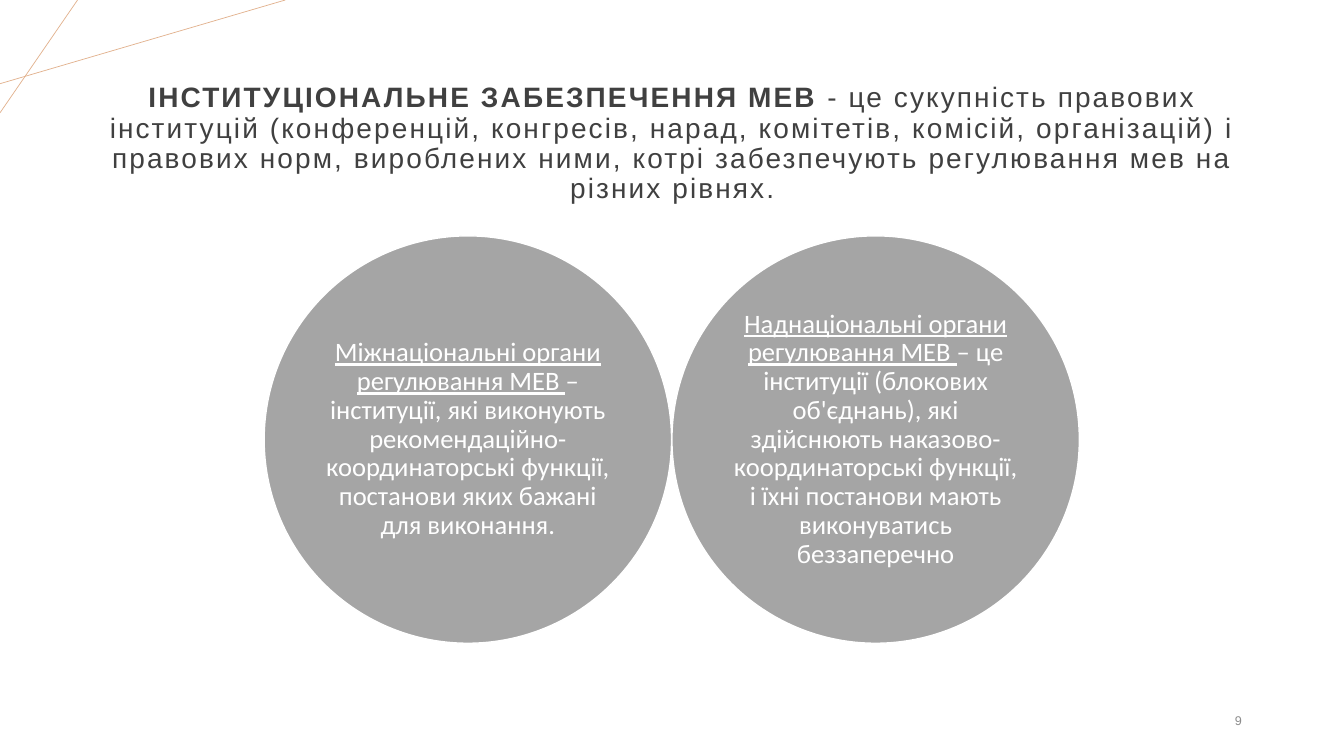
from lxml import etree
from pptx import Presentation
from pptx.dml.color import RGBColor
from pptx.enum import shapes, text
from pptx.oxml import ns
from pptx.util import Pt


def paint(color, tint):
    color.rgb = RGBColor.from_string(tint)


def write(shape, parts, size, font, tint, align=text.PP_ALIGN.CENTER,
          lead=0.9, inset=(7.2, 3.6, 7.2, 3.6), gap=0):
    """Fill a shape with one paragraph of (words, format) parts; gap is letter spacing."""
    frame = shape.text_frame
    frame.word_wrap = True
    frame.auto_size = text.MSO_AUTO_SIZE.NONE
    frame.vertical_anchor = text.MSO_ANCHOR.MIDDLE
    frame.margin_left, frame.margin_top, frame.margin_right, frame.margin_bottom = map(Pt, inset)
    para = frame.paragraphs[0]
    para.alignment, para.line_spacing = align, lead
    for words, style in parts:
        run = para.add_run()
        run.text = words
        run.font.size, run.font.name = Pt(size), font
        run.font.bold = style == "bold"
        run.font.underline = style == "under"
        paint(run.font.color, tint)
        if gap:
            run._r.get_or_add_rPr().set("spc", str(int(gap * 100)))


deck = Presentation()
deck.slide_width, deck.slide_height = Pt(960), Pt(540)
slide = deck.slides.add_slide(deck.slide_layouts[5])

# Corner lines
for x1, y1, x2, y2 in [(0, 59.8, 203.8, 0), (55.4, 0, 0, 80.6)]:
    line = slide.shapes.add_connector(
        shapes.MSO_CONNECTOR.STRAIGHT, Pt(x1), Pt(y1), Pt(x2), Pt(y2))
    paint(line.line.color, "E2B18D")
    line.line.width = Pt(0.5)
    etree.SubElement(line._element.spPr, ns.qn("a:effectLst"))

# Title, lifted by a deeper bottom inset
title = slide.shapes.title
title.left, title.top, title.width, title.height = Pt(66.2), Pt(28.8), Pt(828), Pt(170)
write(title, [
    ("ІНСТИТУЦІОНАЛЬНЕ ЗАБЕЗПЕЧЕННЯ МЕВ ", "bold"),
    ("- це сукупність правових інституцій (конференцій, конгресів, нарад, комітетів, "
     "комісій, організацій) і правових норм, вироблених ними, котрі забезпечують "
     "регулювання мев на різних рівнях.", "plain"),
], 20, "Arial", "404040", inset=(7.2, 3.6, 7.2, 25.2), gap=1.5)

# Two touching circles
bodies = [
    ("Міжнаціональні органи регулювання МЕВ ",
     "–інституції, які виконують рекомендаційно-координаторські функції, "
     "постанови яких бажані для виконання."),
    ("Наднаціональні органи регулювання МЕВ ",
     "– це інституції (блокових об'єднань), які здійснюють наказово-координаторські "
     "функції, і їхні постанови мають виконуватись беззаперечно"),
]
for i, (term, sense) in enumerate(bodies):
    disc = slide.shapes.add_shape(
        shapes.MSO_SHAPE.OVAL, Pt(188.7 + i * 291.3), Pt(168.5), Pt(291), Pt(291))
    disc.shadow.inherit = False
    disc.fill.solid()
    paint(disc.fill.fore_color, "A5A5A5")
    paint(disc.line.color, "FFFFFF")
    disc.line.width = Pt(1)
    write(disc, [(term, "under"), (sense, "plain")], 19, "Calibri", "FFFFFF",
          inset=(0, 0, 0, 0))

# Page number
page = slide.shapes.add_textbox(Pt(678.2), Pt(500.4), Pt(216), Pt(28.8))
write(page, [("9", "plain")], 9, "Arial", "8C8C8C", align=text.PP_ALIGN.RIGHT, lead=1.0)

deck.save("out.pptx")
